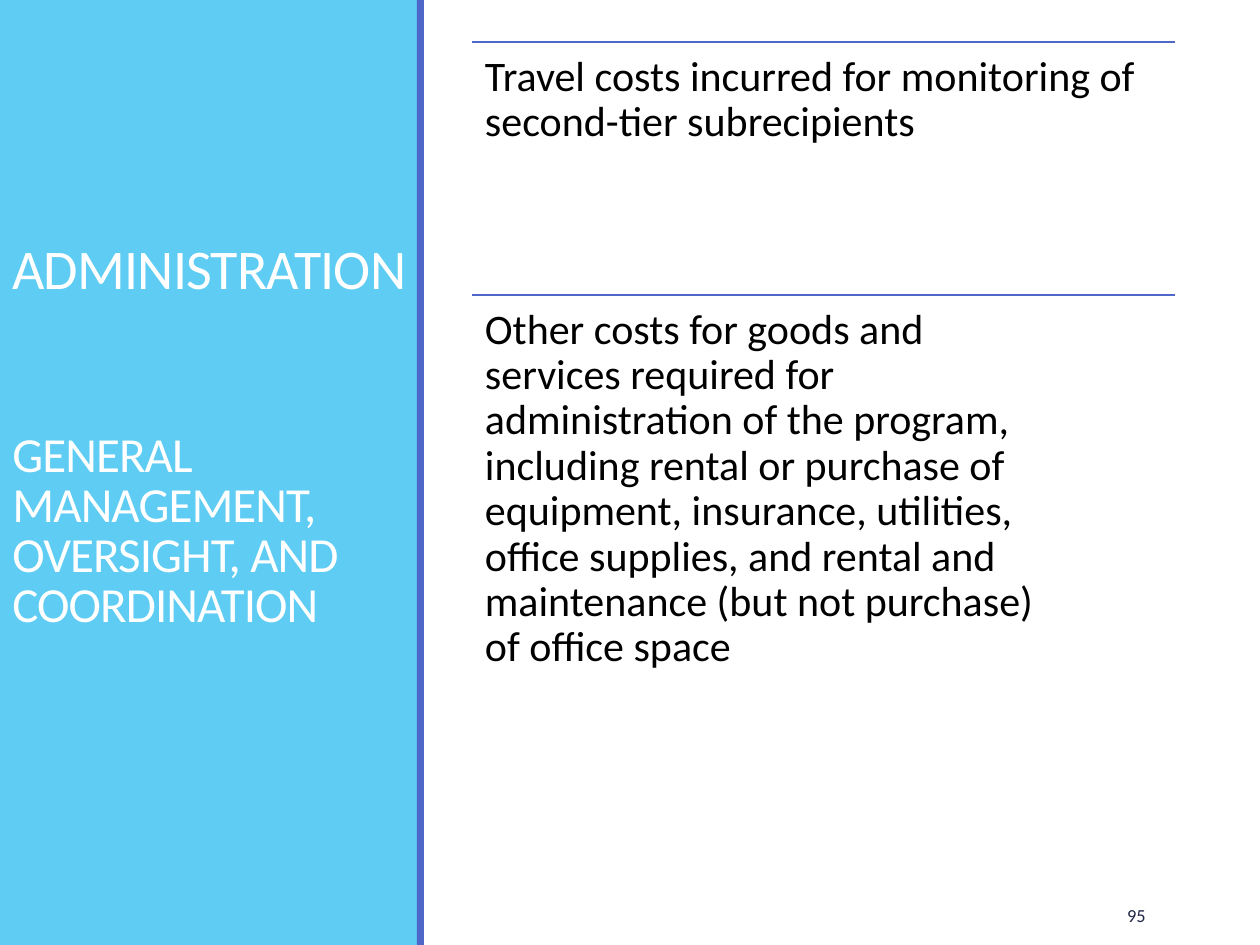
import pptx
import pptx.util
import pptx.dml.color
import pptx.enum.shapes
import pptx.enum.text
import pptx.oxml.ns
import lxml.etree

EMU_PER_PX = 914400 / 126
PAGE_WIDTH, PAGE_HEIGHT = 1260, 945
FONT = "Calibri"
COLORS = {
    "panel": "5ECCF3",
    "accent": "4E67C8",
    "heading": "FFFFFF",
    "body": "000000",
    "number": "212745",
}
COSTS = [
    ("Travel costs incurred for monitoring of second-tier subrecipients", 703, 253),
    ("Other costs for goods and services required for administration of the program, "
     "including rental or purchase of equipment, insurance, utilities, office supplies, "
     "and rental and maintenance (but not purchase) of office space", 591, 156),
]


def px(length):
    return pptx.util.Emu(round(length * EMU_PER_PX))


def color(name):
    return pptx.dml.color.RGBColor.from_string(COLORS[name])


def add_bar(page, left, top, width, height, fill):
    bar = page.shapes.add_shape(
        pptx.enum.shapes.MSO_SHAPE.RECTANGLE, px(left), px(top), px(width), px(height))
    bar.shadow.inherit = False
    bar.fill.solid()
    bar.fill.fore_color.rgb = color(fill)
    bar.line.fill.background()


def add_rule(page, left, top, width):
    rule = page.shapes.add_connector(
        pptx.enum.shapes.MSO_CONNECTOR.STRAIGHT, px(left), px(top), px(left + width), px(top))
    rule.line.color.rgb = color("accent")
    rule.line.width = pptx.util.Pt(1.25)
    lxml.etree.SubElement(rule._element.spPr, pptx.oxml.ns.qn("a:effectLst"))


def add_text_frame(page, left, top, width, height, anchor):
    box = page.shapes.add_textbox(px(left), px(top), px(width), px(height))
    frame = box.text_frame
    frame.word_wrap = True
    frame.vertical_anchor = anchor
    return frame


def write(para, text, size, ink, spacing=1.0):
    para.text = text
    para.line_spacing = spacing
    font = para.runs[0].font
    font.name = FONT
    font.size = pptx.util.Pt(size)
    font.color.rgb = color(ink)
    return para.runs[0]


def add_title_panel(page, left, top, width, height):
    add_bar(page, left, top, width, height, "panel")
    frame = add_text_frame(page, left, top + 72, width + 7, 795,
                           pptx.enum.text.MSO_ANCHOR.MIDDLE)
    frame.margin_bottom = px(68)
    heading = frame.paragraphs[0]
    subheading = frame.add_paragraph()
    subheading.space_before = pptx.util.Pt(75)
    for para, text, size in (
        (heading, "ADMINISTRATION", 32),
        (subheading, "GENERAL MANAGEMENT, OVERSIGHT, AND COORDINATION", 28),
    ):
        span = write(para, text, size, "heading", 0.85)
        span.font._element.set("spc", "-50")
    add_bar(page, left + width - 1, top, 7, height, "accent")


def add_cost_list(page, left, top, width):
    for text, text_width, height in COSTS:
        add_rule(page, left, top, width)
        frame = add_text_frame(page, left, top, text_width, height,
                               pptx.enum.text.MSO_ANCHOR.TOP)
        frame.margin_left = frame.margin_right = px(13)
        frame.margin_top = frame.margin_bottom = px(13)
        write(frame.paragraphs[0], text, 24, "body", 0.9)
        top += height


def add_page_number(page, left, top, width, height):
    frame = add_text_frame(page, left, top, width, height,
                           pptx.enum.text.MSO_ANCHOR.MIDDLE)
    para = frame.paragraphs[0]
    para.alignment = pptx.enum.text.PP_ALIGN.RIGHT
    write(para, "95", 10.5, "number")


def main():
    deck = pptx.Presentation()
    deck.slide_width, deck.slide_height = px(PAGE_WIDTH), px(PAGE_HEIGHT)
    page = deck.slides.add_slide(deck.slide_layouts[6])
    add_title_panel(page, 0, 0, 418, PAGE_HEIGHT)
    add_cost_list(page, 472, 42, 703)
    add_page_number(page, 1046, 890, 112, 50)
    deck.save("out.pptx")


if __name__ == "__main__":
    main()
